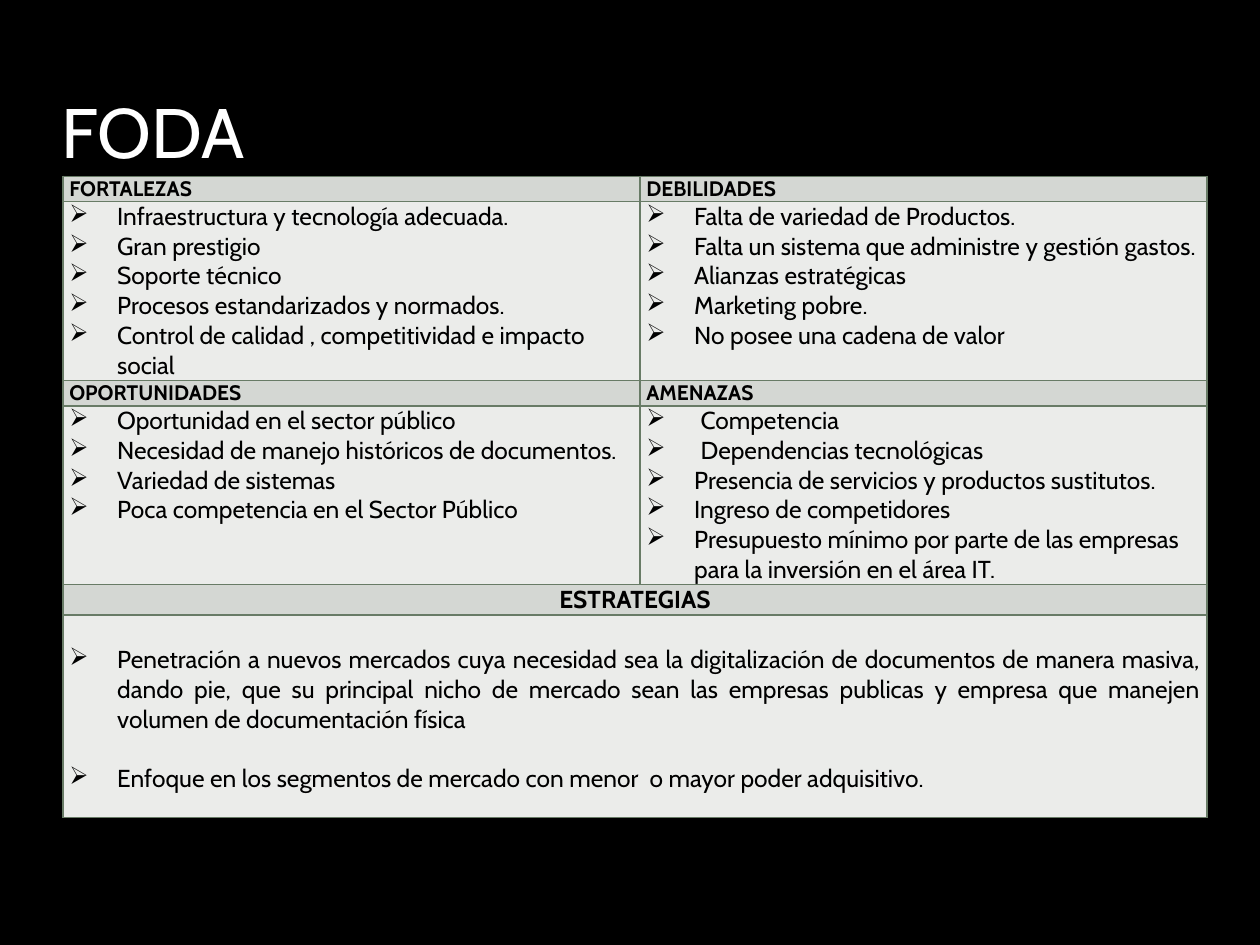
from lxml.etree import SubElement as Sub
from pptx import Presentation
from pptx.dml.color import RGBColor
from pptx.enum.text import MSO_ANCHOR as Anchor, PP_ALIGN as Align
from pptx.oxml.ns import qn
from pptx.util import Inches, Pt

BLACK = RGBColor(0, 0, 0)
WHITE = RGBColor(255, 255, 255)
HEAD = RGBColor(0xD4, 0xD7, 0xD3)
BODY = RGBColor(0xEB, 0xEC, 0xEA)
EDGE = RGBColor(0x68, 0x7B, 0x66)
FONT = "Cabin"


def add_run(para, text, size, color, bold=False):
    run = para.add_run()
    run.text = text
    run.font.name = FONT
    run.font.size = Pt(size)
    run.font.bold = bold
    run.font.color.rgb = color


def add_list(cell, items):
    for i, text in enumerate(items):
        para = cell.text_frame.paragraphs[0] if i == 0 else cell.text_frame.add_paragraph()
        hang = 0.43 if text in WIDE else 0.38
        props = para._p.get_or_add_pPr()
        props.set("marL", str(Inches(hang)))
        props.set("indent", str(-Inches(hang)))
        Sub(props, qn("a:buChar"), char="➢")
        add_run(para, text, 14, BLACK)


WIDE = ["Competencia", "Dependencias tecnológicas"]
GROUPS = [
    (0, 0, "FORTALEZAS", [
        "Infraestructura y tecnología adecuada.",
        "Gran prestigio",
        "Soporte técnico",
        "Procesos estandarizados y normados.",
        "Control de calidad , competitividad e impacto social",
    ]),
    (0, 1, "DEBILIDADES", [
        "Falta de variedad de Productos.",
        "Falta un sistema que administre y gestión gastos.",
        "Alianzas estratégicas",
        "Marketing pobre.",
        "No posee una cadena de valor",
    ]),
    (2, 0, "OPORTUNIDADES", [
        "Oportunidad en el sector público",
        "Necesidad de manejo históricos de documentos.",
        "Variedad de sistemas",
        "Poca competencia en el Sector Público",
    ]),
    (2, 1, "AMENAZAS", WIDE + [
        "Presencia de servicios y productos sustitutos.",
        "Ingreso de competidores",
        "Presupuesto mínimo por parte de las empresas para la inversión en el área IT.",
    ]),
    (4, 0, "ESTRATEGIAS", [
        "Penetración a nuevos mercados cuya necesidad sea la digitalización de documentos "
        "de manera masiva, dando pie, que su principal nicho de mercado sean las empresas "
        "publicas y empresa que manejen volumen de documentación física",
        "Enfoque en los segmentos de mercado con menor  o mayor poder adquisitivo.",
    ]),
]

prs = Presentation()
prs.slide_width = Inches(10)
prs.slide_height = Inches(7.5)
slide = prs.slides.add_slide(prs.slide_layouts[6])
slide.background.fill.solid()
slide.background.fill.fore_color.rgb = BLACK

box = slide.shapes.add_textbox(Inches(0.39), Inches(0.25), Inches(8.4), Inches(1.17))
box.text_frame.word_wrap = True
box.text_frame.vertical_anchor = Anchor.BOTTOM
add_run(box.text_frame.paragraphs[0], "FODA", 40, WHITE)

rows = [0.2, 1.42, 0.2, 1.42, 0.24, 1.61]
cols = [4.58, 4.5]
table = slide.shapes.add_table(
    len(rows), len(cols), Inches(0.5), Inches(1.4), Inches(sum(cols)), Inches(sum(rows))
).table
for row, high in zip(table.rows, rows):
    row.height = Inches(high)
for col, wide in zip(table.columns, cols):
    col.width = Inches(wide)

for r in range(len(rows)):
    for c in range(len(cols)):
        cell = table.cell(r, c)
        cell.margin_left = cell.margin_right = Inches(0.05)
        cell.margin_top = cell.margin_bottom = 0
        props = cell._tc.get_or_add_tcPr()
        for side in ("lnL", "lnR", "lnT", "lnB"):
            line = Sub(props, qn(f"a:{side}"), w=str(Pt(1)))
            Sub(Sub(line, qn("a:solidFill")), qn("a:srgbClr"), val=str(EDGE))
        cell.fill.solid()
        cell.fill.fore_color.rgb = BODY if r % 2 else HEAD

for r in (4, 5):
    table.cell(r, 0).merge(table.cell(r, 1))

for r, c, name, items in GROUPS:
    para = table.cell(r, c).text_frame.paragraphs[0]
    add_run(para, name, 14 if r == 4 else 12, BLACK, True)
    add_list(table.cell(r + 1, c), items)

table.cell(4, 0).text_frame.paragraphs[0].alignment = Align.CENTER
plan = table.cell(5, 0)
plan.margin_top = Inches(0.24)
for para in plan.text_frame.paragraphs:
    para.alignment = Align.JUSTIFY
plan.text_frame.paragraphs[1].space_before = Pt(17)

prs.save("out.pptx")
